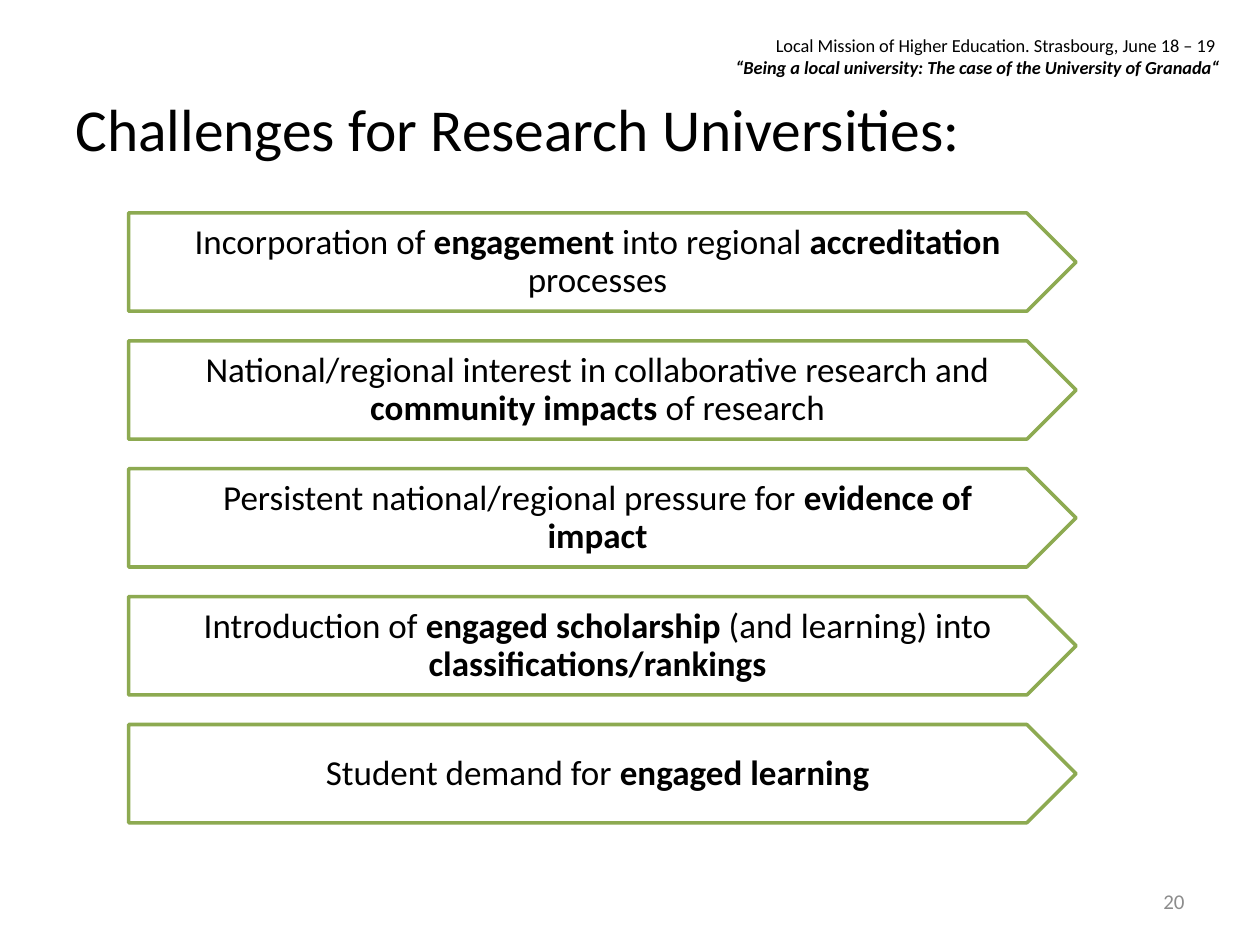
"""Builds a slide listing challenges for research universities as arrow banners."""
from dataclasses import dataclass

import pptx
import pptx.dml.color
import pptx.enum.shapes
import pptx.enum.text
import pptx.util

ALIGN = pptx.enum.text.PP_ALIGN
ANCHOR = pptx.enum.text.MSO_ANCHOR
COLUMNS, ROWS = 100, 75


@dataclass(frozen=True)
class Theme:
    """Colours, font and type sizes."""
    font: str = "Calibri"
    ink: str = "000000"
    muted: str = "8C8C8C"
    paper: str = "FFFFFF"
    green: str = "8DAA51"
    title: float = 34
    banner: float = 20
    number: float = 12
    header: float = 10.5
    outline: float = 2


class Sheet:
    """Holds the theme and the current slide."""

    def __init__(self, deck, theme):
        self.deck, self.theme = deck, theme
        self.page = deck.slides.add_slide(deck.slide_layouts[5])

    def place(self, left, top, width, height):
        """Turns grid columns and rows into slide lengths."""
        across = self.deck.slide_width / COLUMNS
        down = self.deck.slide_height / ROWS
        return [round(value) for value in
                (left * across, top * down, width * across, height * down)]

    def colour(self, value):
        """Reads a theme colour."""
        return pptx.dml.color.RGBColor.from_string(value)

    def style(self, para, size, align, colour=None):
        """Formats one paragraph."""
        para.alignment = align
        para.font.name = self.theme.font
        para.font.size = pptx.util.Pt(size)
        para.font.color.rgb = self.colour(colour or self.theme.ink)

    def title(self, text, area):
        """Moves and fills the title placeholder."""
        box = self.page.shapes.title
        box.left, box.top, box.width, box.height = self.place(*area)
        frame = box.text_frame
        frame.text = text
        frame.vertical_anchor = ANCHOR.TOP
        frame.auto_size = pptx.enum.text.MSO_AUTO_SIZE.NONE
        self.style(frame.paragraphs[0], self.theme.title, ALIGN.LEFT)

    def note(self, lines, area, size, colour=None, anchor=ANCHOR.TOP):
        """Adds right-aligned small text and returns its paragraphs."""
        frame = self.page.shapes.add_textbox(*self.place(*area)).text_frame
        frame.word_wrap = True
        frame.vertical_anchor = anchor
        frame.text = "\n".join(lines)
        for para in frame.paragraphs:
            self.style(para, size, ALIGN.RIGHT, colour)
        return frame.paragraphs

    def banner(self, parts, area):
        """Adds an arrow banner whose text parts alternate plain and bold."""
        box = self.page.shapes.add_shape(
            pptx.enum.shapes.MSO_SHAPE.PENTAGON, *self.place(*area))
        box.shadow.inherit = False
        box.fill.solid()
        box.fill.fore_color.rgb = self.colour(self.theme.paper)
        box.line.color.rgb = self.colour(self.theme.green)
        box.line.width = pptx.util.Pt(self.theme.outline)
        frame = box.text_frame
        frame.word_wrap = True
        frame.vertical_anchor = ANCHOR.MIDDLE
        (frame.margin_left, frame.margin_top,
         frame.margin_right, frame.margin_bottom) = self.place(3.4, 0.6, 2.2, 0.6)
        para = frame.paragraphs[0]
        self.style(para, self.theme.banner, ALIGN.CENTER)
        para.line_spacing = 0.9
        for index, text in enumerate(parts):
            span = para.add_run()
            span.text = text
            span.font.bold = index % 2 == 1


CHALLENGES = [
    ("Incorporation of ", "engagement", " into regional ", "accreditation", " processes"),
    ("National/regional interest in collaborative research and ",
     "community impacts ", "of research"),
    ("Persistent national/regional pressure for ", "evidence of impact"),
    ("Introduction of ", "engaged scholarship ", "(and learning) into ",
     "classifications/rankings"),
    ("Student demand for ", "engaged learning"),
]


def main():
    """Builds and saves the deck."""
    deck = pptx.Presentation()
    deck.slide_width, deck.slide_height = pptx.util.Inches(10), pptx.util.Inches(7.5)
    theme = Theme()
    sheet = Sheet(deck, theme)
    sheet.title("Challenges for Research Universities:", (5, 6.8, 91.5, 8.7))
    header = sheet.note(
        ["Local Mission of Higher Education. Strasbourg, June 18 – 19 ",
         "“Being a local university: The case of the University of Granada“"],
        (4.7, 2.2, 93.1, 4.5), theme.header)
    header[1].font.bold = header[1].font.italic = True
    for index, parts in enumerate(CHALLENGES):
        sheet.banner(parts, (10.2, 16.9 + 10.15 * index, 75.2, 7.8))
    sheet.note(["20"], (71.7, 69.5, 23.3, 4), theme.number, theme.muted, ANCHOR.MIDDLE)
    deck.save("out.pptx")


main()
